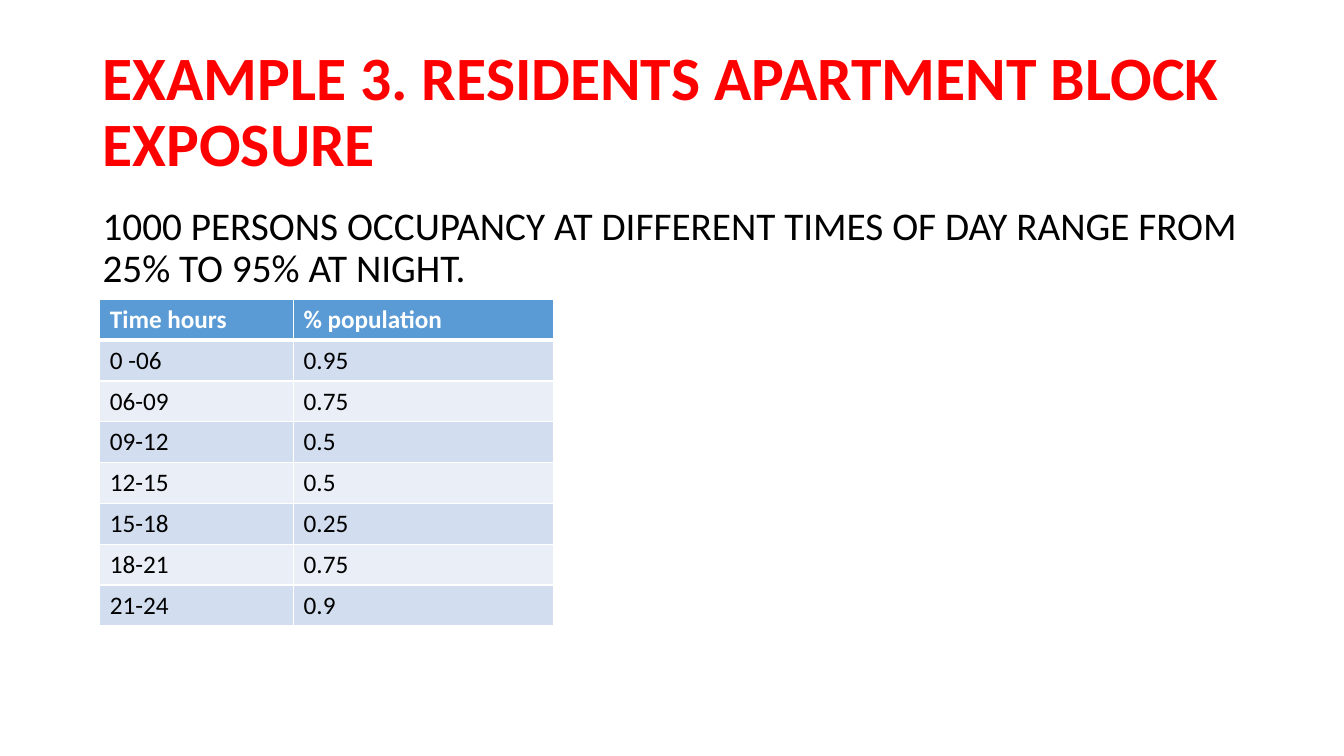
import pptx
import pptx.util
import pptx.dml.color
import pptx.enum.text
from lxml import etree
from pptx.oxml.ns import qn

Inches = pptx.util.Inches
Pt = pptx.util.Pt

FONT = "Calibri"
COLORS = {
    "title": "FF0000",
    "text": "000000",
    "header": "5B9BD5",
    "header_text": "FFFFFF",
    "odd_row": "D2DEEF",
    "even_row": "EAEFF7",
    "border": "FFFFFF",
}
OCCUPANCY = [
    ("Time hours", "% population"),
    ("0 -06", "0.95"),
    ("06-09", "0.75"),
    ("09-12", "0.5"),
    ("12-15", "0.5"),
    ("15-18", "0.25"),
    ("18-21", "0.75"),
    ("21-24", "0.9"),
]


def rgb(key):
    return pptx.dml.color.RGBColor.from_string(COLORS[key])


def style_font(paragraph, size, color, bold=False):
    font = paragraph.font
    font.name, font.size, font.bold = FONT, Pt(size), bold
    font.color.rgb = rgb(color)


def add_text(slide, box, text, size, color, bold=False, anchor="TOP", space_before=0):
    frame = slide.shapes.add_textbox(*map(Inches, box)).text_frame
    frame.word_wrap = True
    frame.vertical_anchor = getattr(pptx.enum.text.MSO_ANCHOR, anchor)
    paragraph = frame.paragraphs[0]
    paragraph.text = text
    paragraph.line_spacing = 0.9
    paragraph.space_before = Pt(space_before)
    style_font(paragraph, size, color, bold)


def add_borders(cell, widths):
    """Draw the cell's sides; widths maps a side (L, R, T, B) to points."""
    properties = cell._tc.get_or_add_tcPr()
    for side, width in widths.items():
        line = etree.SubElement(properties, qn(f"a:ln{side}"), w=str(Pt(width)))
        fill = etree.SubElement(line, qn("a:solidFill"))
        etree.SubElement(fill, qn("a:srgbClr"), val=COLORS["border"])


def add_occupancy_table(slide, box, column_shares):
    left, top, width, height = box
    table = slide.shapes.add_table(
        len(OCCUPANCY), len(column_shares), *map(Inches, box)).table
    for column, share in zip(table.columns, column_shares):
        column.width = Inches(width * share)
    for row_index, values in enumerate(OCCUPANCY):
        table.rows[row_index].height = Inches(height / len(OCCUPANCY))
        is_header = row_index == 0
        row_fill = "header" if is_header else "odd_row" if row_index % 2 else "even_row"
        for column_index, value in enumerate(values):
            cell = table.cell(row_index, column_index)
            # Thick rule between the header and the first row
            add_borders(cell, {"L": 1, "R": 1, "T": 3 if row_index == 1 else 1,
                               "B": 3 if is_header else 1})
            cell.fill.solid()
            cell.fill.fore_color.rgb = rgb(row_fill)
            cell.text = value
            style_font(cell.text_frame.paragraphs[0], 18,
                       "header_text" if is_header else "text", is_header)


def build_exposure_slide(slide, box):
    left, top, width, height = box
    # Title
    add_text(slide, (left, top, width, 1.45),
             "EXAMPLE 3. RESIDENTS APARTMENT BLOCK EXPOSURE",
             44, "title", bold=True, anchor="MIDDLE")
    # Introduction
    add_text(slide, (left, top + 1.6, width, height - 1.6),
             "1000 PERSONS OCCUPANCY AT DIFFERENT TIMES OF DAY RANGE FROM "
             "25% TO 95% AT NIGHT.", 28, "text", space_before=10)
    # Occupancy by time of day
    add_occupancy_table(slide, (left + 0.07, top + 2.57, 4.5, 3.24), (0.427, 0.573))


def main():
    presentation = pptx.Presentation()
    presentation.slide_width = Inches(13.33)
    presentation.slide_height = Inches(7.5)
    slide = presentation.slides.add_slide(presentation.slide_layouts[6])
    build_exposure_slide(slide, (0.92, 0.4, 11.5, 6.36))
    presentation.save("out.pptx")


if __name__ == "__main__":
    main()
